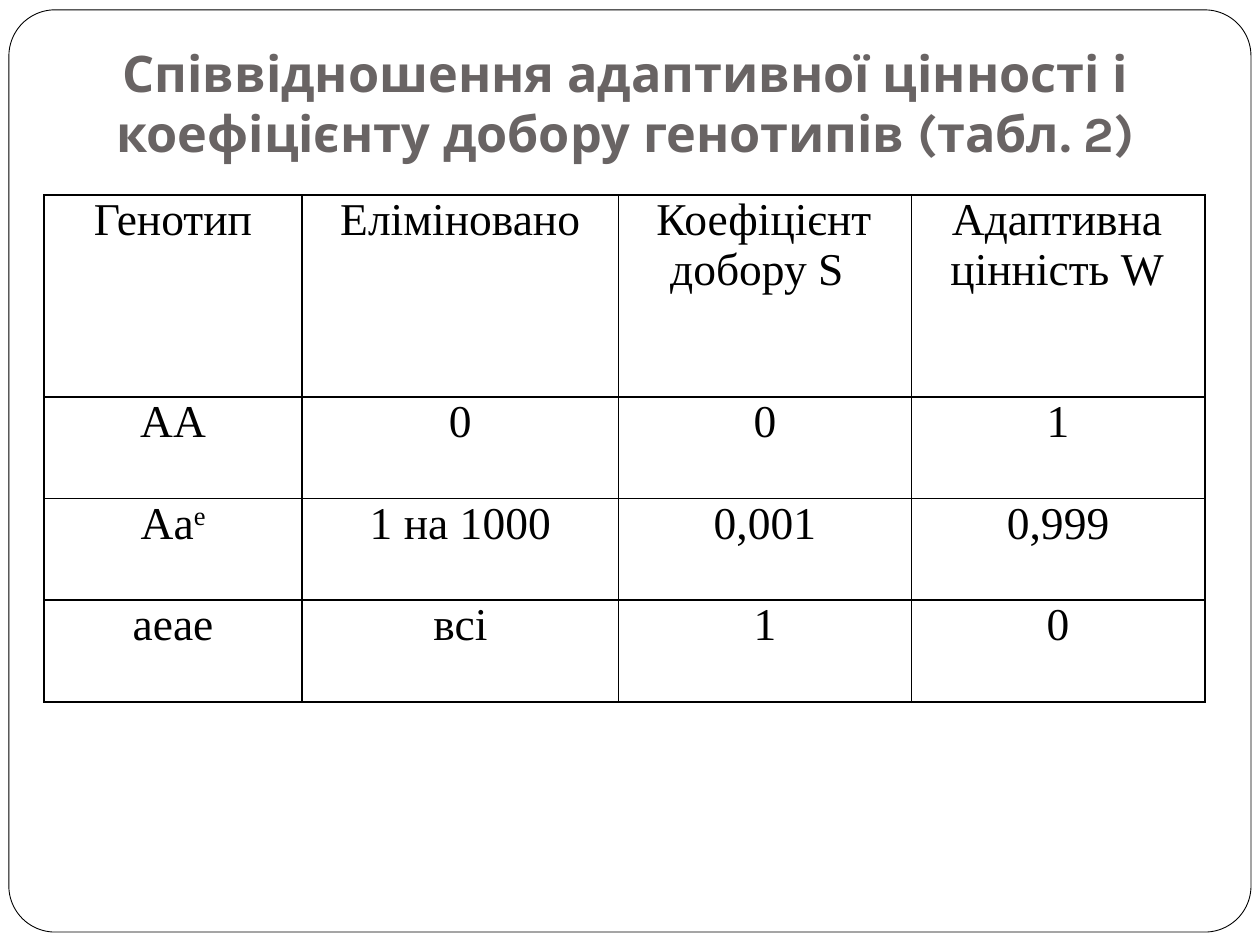
from dataclasses import dataclass

from lxml import etree
from pptx import Presentation
from pptx import util as u
from pptx.dml.color import RGBColor
from pptx.enum import shapes, text
from pptx.oxml import ns

Cm, Pt = u.Cm, u.Pt

WHITE = RGBColor(0xFF, 0xFF, 0xFF)
BLACK = RGBColor(0x00, 0x00, 0x00)
GRAY = RGBColor(0x69, 0x64, 0x64)

TITLE = "Співвідношення адаптивної цінності і коефіцієнту добору генотипів (табл. 2)"
COLUMN_WIDTHS = (5.2, 6.38, 5.9, 5.92)
ROW_HEIGHTS = (4.07, 2.05, 2.05, 2.05)


@dataclass(frozen=True)
class Entry:
    """Cell text; a hanging entry is left aligned with the given indents in cm."""
    words: str
    superscript: str = ""
    margin: float = 0
    first_line: float = 0


ROWS = (
    (Entry("Генотип"), Entry("Еліміновано"),
     Entry("Коефіцієнт добору S", margin=1.04, first_line=-0.28),
     Entry("Адаптивна цінність W", margin=0.79, first_line=0.03)),
    (Entry("АА"), Entry("0"), Entry("0"), Entry("1")),
    (Entry("Aa", superscript="e"), Entry("1 на 1000"), Entry("0,001"), Entry("0,999")),
    (Entry("aeae"), Entry("всі"), Entry("1"), Entry("0")),
)


def add_run(paragraph, words: str, font_name: str, size: float,
            color: RGBColor, bold: bool = False):
    run = paragraph.add_run()
    run.text = words
    run.font.name = font_name
    run.font.size = Pt(size)
    run.font.bold = bold
    run.font.color.rgb = color
    return run


def add_frame(slide) -> None:
    frame = slide.shapes.add_shape(shapes.MSO_SHAPE.ROUNDED_RECTANGLE,
                                   Cm(0.18), Cm(0.2), Cm(25.04), Cm(18.59))
    frame.adjustments[0] = 0.05
    frame.shadow.inherit = False
    frame.fill.solid()
    frame.fill.fore_color.rgb = WHITE
    frame.line.color.rgb = BLACK
    frame.line.width = Pt(0.5)


def add_title(slide) -> None:
    box = slide.shapes.add_textbox(Cm(0.51), Cm(0.53), Cm(24.2), Cm(3))
    frame = box.text_frame
    frame.word_wrap = True
    frame.vertical_anchor = text.MSO_ANCHOR.BOTTOM
    frame.margin_bottom = Cm(0.25)
    paragraph = frame.paragraphs[0]
    paragraph.alignment = text.PP_ALIGN.CENTER
    add_run(paragraph, TITLE, "Karla", 28.8, GRAY, bold=True)


def set_borders(cell, color: RGBColor, width: int) -> None:
    properties = cell._tc.get_or_add_tcPr()
    for position, side in enumerate(("lnL", "lnR", "lnT", "lnB")):
        line = etree.Element(ns.qn(f"a:{side}"), w=str(width))
        fill = etree.SubElement(line, ns.qn("a:solidFill"))
        etree.SubElement(fill, ns.qn("a:srgbClr"), val=str(color))
        properties.insert(position, line)


def fill_cell(cell, entry: Entry) -> None:
    cell.margin_left = cell.margin_right = cell.margin_top = cell.margin_bottom = 0
    cell.fill.solid()
    cell.fill.fore_color.rgb = WHITE
    set_borders(cell, BLACK, Pt(1))
    paragraph = cell.text_frame.paragraphs[0]
    if entry.margin:
        paragraph.alignment = text.PP_ALIGN.LEFT
        properties = paragraph._p.get_or_add_pPr()
        properties.set("marL", str(Cm(entry.margin)))
        properties.set("indent", str(Cm(entry.first_line)))
    else:
        paragraph.alignment = text.PP_ALIGN.CENTER
    add_run(paragraph, entry.words, "Times New Roman", 26, BLACK)
    if entry.superscript:
        run = add_run(paragraph, entry.superscript, "Times New Roman", 26, BLACK)
        run._r.get_or_add_rPr().set("baseline", "30000")


def add_genotype_table(slide) -> None:
    table = slide.shapes.add_table(len(ROWS), len(COLUMN_WIDTHS), Cm(0.89), Cm(3.93),
                                   Cm(sum(COLUMN_WIDTHS)), Cm(sum(ROW_HEIGHTS))).table
    table.first_row = table.horz_banding = False
    for column, width in zip(table.columns, COLUMN_WIDTHS):
        column.width = Cm(width)
    for row, height, entries in zip(table.rows, ROW_HEIGHTS, ROWS):
        row.height = Cm(height)
        for cell, entry in zip(row.cells, entries):
            fill_cell(cell, entry)


def main() -> None:
    presentation = Presentation()
    presentation.slide_width, presentation.slide_height = Cm(25.4), Cm(19.05)
    slide = presentation.slides.add_slide(presentation.slide_layouts[6])
    add_frame(slide)
    add_title(slide)
    add_genotype_table(slide)
    presentation.save("out.pptx")


if __name__ == "__main__":
    main()
